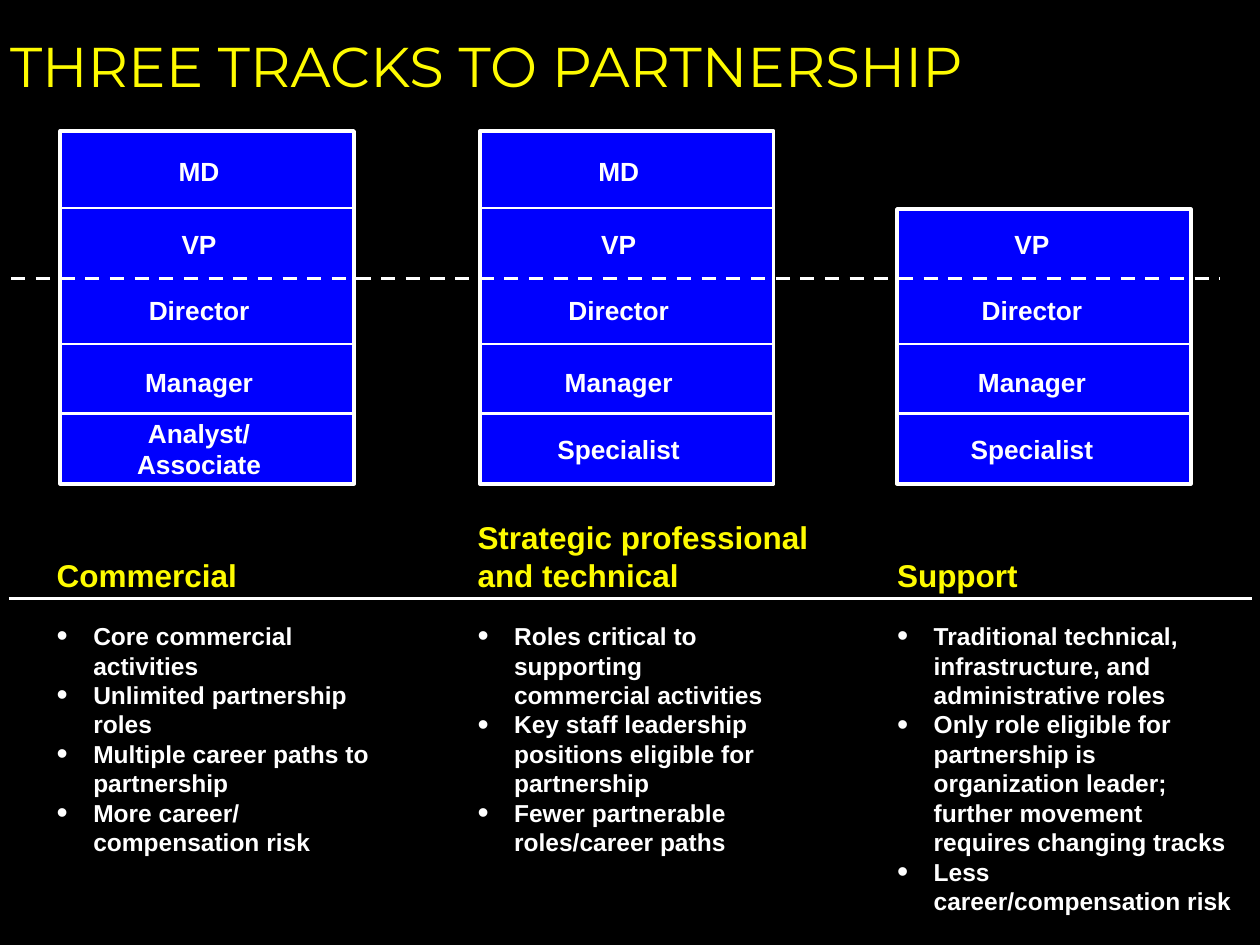
from lxml import etree
from pptx import Presentation
from pptx import util as u
from pptx.dml.color import RGBColor
from pptx.enum import dml, shapes, text
from pptx.oxml.ns import qn

BLACK, BLUE, WHITE, YELLOW = "000000", "0000FE", "FFFFFF", "FEFB00"
TITLE = "THREE TRACKS TO PARTNERSHIP"
TRACKS = [
    {"left": 0.48, "top": 1.04, "label_center": 1.58, "text_left": 0.45, "list_width": 2.57, "list_height": 1.87,
     "ranks": ["MD", "VP", "Director", "Manager", "Analyst/ Associate"],
     "heading": ["Commercial"],
     "points": ["Core commercial activities", "Unlimited partnership roles",
                "Multiple career paths to partnership", "More career/ compensation risk"]},
    {"left": 3.81, "top": 1.04, "label_center": 4.91, "text_left": 3.79, "list_width": 2.32, "list_height": 1.87,
     "ranks": ["MD", "VP", "Director", "Manager", "Specialist"],
     "heading": ["Strategic professional", "and technical"],
     "points": ["Roles critical to supporting commercial activities",
                "Key staff leadership positions eligible for partnership",
                "Fewer partnerable roles/career paths"]},
    {"left": 7.12, "top": 1.66, "label_center": 8.19, "text_left": 7.12, "list_width": 2.74, "list_height": 2.34,
     "ranks": ["VP", "Director", "Manager", "Specialist"],
     "heading": ["Support"],
     "points": ["Traditional technical, infrastructure, and administrative roles",
                "Only role eligible for partnership is organization leader; "
                "further movement requires changing tracks",
                "Less career/compensation risk"]},
]
RANK_ROWS = [(1.36, 0.64), (1.94, 0.64), (2.46, 0.89), (3.03, 0.89), (3.56, 1.2)]
DIVIDERS = [1.65, 2.73, 3.28]
TRACK_WIDTH, TRACK_BOTTOM = 2.33, 3.84
LIST_PLACEHOLDERS = [1, 2, 4]


def color(value):
    return RGBColor.from_string(value)


def place(shape, left, top, width, height):
    shape.left, shape.top = u.Inches(left), u.Inches(top)
    shape.width, shape.height = u.Inches(width), u.Inches(height)


def prepare_frame(shape, anchor):
    frame = shape.text_frame
    frame.word_wrap = True
    frame.auto_size = text.MSO_AUTO_SIZE.NONE
    frame.vertical_anchor = anchor
    frame.margin_left = frame.margin_top = frame.margin_right = frame.margin_bottom = 0
    return frame


def add_run(paragraph, words, size, fill, name="Arial", bold=True):
    run = paragraph.add_run()
    run.text = words
    run.font.size, run.font.name, run.font.bold = u.Pt(size), name, bold
    run.font.color.rgb = color(fill)


def add_line(slide, x1, y1, x2, y2, width=1.5, dashed=False):
    line = slide.shapes.add_connector(shapes.MSO_CONNECTOR.STRAIGHT, *map(u.Inches, (x1, y1, x2, y2)))
    line.line.color.rgb = color(WHITE)
    line.line.width = u.Pt(width)
    if dashed:
        line.line.dash_style = dml.MSO_LINE.DASH
    etree.SubElement(line._element.spPr, qn("a:effectLst"))


def add_text(slide, lines, box, size, fill, align, anchor):
    shape = slide.shapes.add_textbox(*map(u.Inches, box))
    paragraph = prepare_frame(shape, anchor).paragraphs[0]
    paragraph.alignment = align
    for index, words in enumerate(lines):
        if index:
            paragraph.add_line_break()
        add_run(paragraph, words, size, fill)


def add_bullet(paragraph):
    properties = paragraph._p.get_or_add_pPr()
    properties.set("marL", str(u.Inches(0.29)))
    properties.set("indent", str(-u.Inches(0.29)))
    bullet_color = etree.SubElement(properties, qn("a:buClr"))
    etree.SubElement(bullet_color, qn("a:srgbClr"), val=WHITE)
    etree.SubElement(properties, qn("a:buSzPct"), val="130000")
    etree.SubElement(properties, qn("a:buFont"), typeface="Arial")
    etree.SubElement(properties, qn("a:buChar"), char="•")


def fill_list(placeholder, track):
    place(placeholder, track["text_left"], 4.93, track["list_width"], track["list_height"])
    frame = prepare_frame(placeholder, text.MSO_ANCHOR.TOP)
    for index, point in enumerate(track["points"]):
        paragraph = frame.add_paragraph() if index else frame.paragraphs[0]
        paragraph.level = 1
        add_bullet(paragraph)
        paragraph.space_before = u.Pt(0)
        paragraph.alignment = text.PP_ALIGN.LEFT
        add_run(paragraph, point, 14, WHITE)


def add_tower(slide, track):
    left, top = track["left"], track["top"]
    tower = slide.shapes.add_shape(
        shapes.MSO_SHAPE.RECTANGLE, *map(u.Inches, (left, top, TRACK_WIDTH, TRACK_BOTTOM - top)))
    tower.shadow.inherit = False
    tower.fill.solid()
    tower.fill.fore_color.rgb = color(BLUE)
    tower.line.color.rgb = color(WHITE)
    tower.line.width = u.Pt(2.25)
    for y in DIVIDERS:
        if y > top:
            add_line(slide, left, y, left + TRACK_WIDTH, y)
    for rank, (middle, width) in zip(track["ranks"], RANK_ROWS[-len(track["ranks"]):]):
        height = 0.5 if " " in rank else 0.25
        box = (track["label_center"] - width / 2, middle - height / 2, width, height)
        add_text(slide, [rank], box, 15, WHITE, text.PP_ALIGN.CENTER, text.MSO_ANCHOR.MIDDLE)


def main():
    """Build the slide comparing three career tracks to partnership."""
    presentation = Presentation()
    presentation.slide_width, presentation.slide_height = u.Inches(10), u.Inches(7.5)
    slide = presentation.slides.add_slide(presentation.slide_layouts[4])
    slide.background.fill.solid()
    slide.background.fill.fore_color.rgb = color(BLACK)

    title = slide.shapes.title
    place(title, 0.08, 0.25, 9.83, 0.53)
    paragraph = prepare_frame(title, text.MSO_ANCHOR.TOP).paragraphs[0]
    paragraph.alignment = text.PP_ALIGN.LEFT
    add_run(paragraph, TITLE, 32, YELLOW, "Montserrat", False)

    placeholders = {item.placeholder_format.idx: item for item in slide.placeholders}
    for track, number in zip(TRACKS, LIST_PLACEHOLDERS):
        add_tower(slide, track)
        add_text(slide, track["heading"], (track["text_left"], 4.13, 2.74, 0.58), 18, YELLOW,
                 text.PP_ALIGN.LEFT, text.MSO_ANCHOR.BOTTOM)
        fill_list(placeholders[number], track)
    add_line(slide, 0.09, 2.21, 9.68, 2.21, 2, dashed=True)
    add_line(slide, 0.07, 4.75, 9.94, 4.75)

    for item in list(slide.placeholders):
        if not item.text_frame.text:
            item._element.getparent().remove(item._element)
    presentation.save("out.pptx")


if __name__ == "__main__":
    main()
